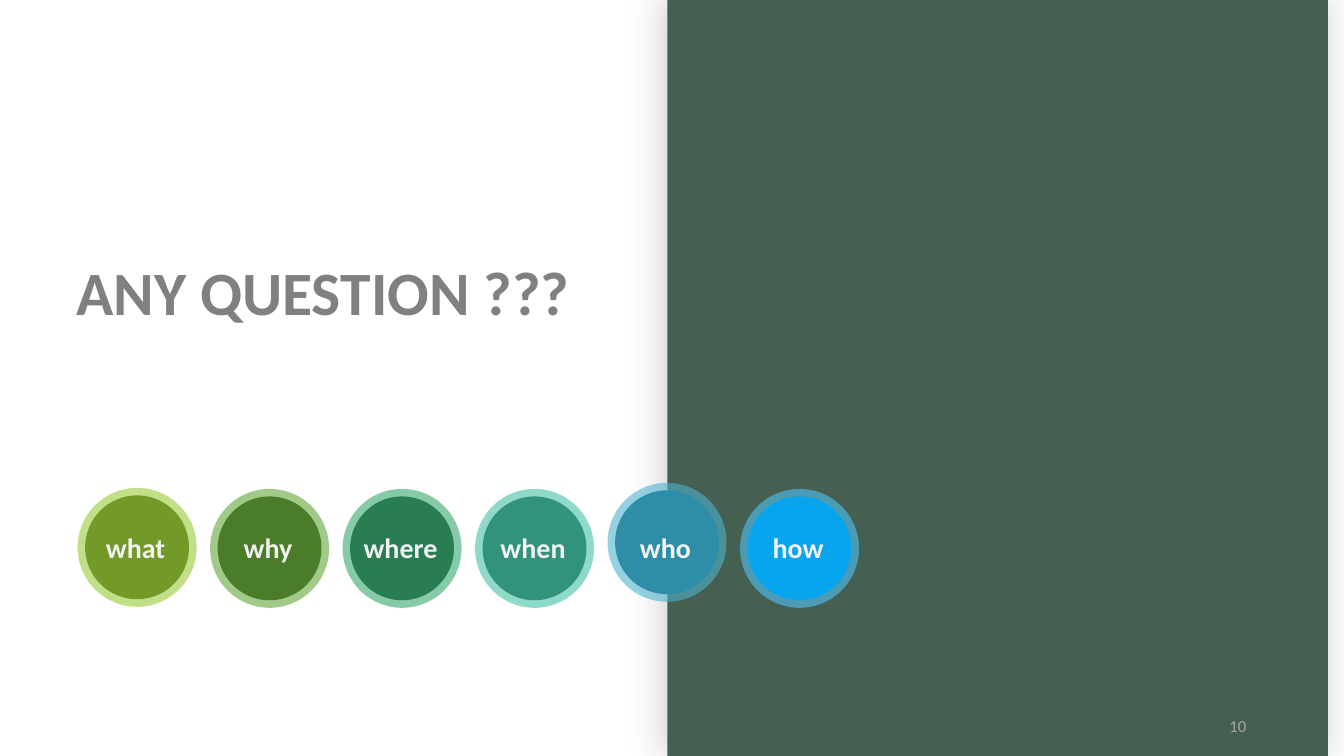
from pptx import Presentation
from pptx.dml.color import RGBColor
from pptx.enum.shapes import MSO_SHAPE as Shape
from pptx.enum.text import MSO_AUTO_SIZE as AutoSize, PP_ALIGN as Align
from pptx.oxml import parse_xml
from pptx.oxml.ns import nsdecls
from pptx.util import Inches, Pt
from lxml.etree import SubElement

PANEL_GREEN = RGBColor(0x45, 0x5F, 0x51)
TITLE_GRAY = RGBColor(0x80, 0x80, 0x80)
NUMBER_GRAY = RGBColor(0xA6, 0xA6, 0xA6)
LABEL_WHITE = RGBColor(0xF2, 0xF2, 0xF2)
LIME, LIME_DARK = RGBColor(0x99, 0xCB, 0x38), RGBColor(0x73, 0x9A, 0x28)
GREEN, GREEN_DARK = RGBColor(0x63, 0xA5, 0x37), RGBColor(0x4A, 0x7C, 0x29)
JADE, JADE_DARK = RGBColor(0x37, 0xA7, 0x6F), RGBColor(0x29, 0x7D, 0x53)
TEAL, TEAL_DARK = RGBColor(0x44, 0xC1, 0xA3), RGBColor(0x31, 0x93, 0x7B)
AQUA, AQUA_DARK = RGBColor(0x4E, 0xB3, 0xCF), RGBColor(0x2E, 0x8E, 0xA8)
SKY, SKY_DARK = RGBColor(0x51, 0xC3, 0xF9), RGBColor(0x08, 0xA5, 0xEF)

# Word, ring colour, disc colour, rows above the common line
QUESTIONS = [
    ("what", LIME, LIME_DARK, 0.1),
    ("why", GREEN, GREEN_DARK, 0),
    ("where", JADE, JADE_DARK, 0),
    ("when", TEAL, TEAL_DARK, 0),
    ("who", AQUA, AQUA_DARK, 0.6),
    ("how", SKY, SKY_DARK, 0),
]


class QuestionSlide:
    """Draws on a grid whose columns and rows are a tenth of an inch."""
    FONT = "Calibri"
    CELL = Inches(0.1)
    RING, DISC, PITCH = 11.8, 10.3, 13.14
    LABEL_WIDTH = 18.3

    def __init__(self, deck):
        self.slide = deck.slides.add_slide(deck.slide_layouts[6])

    def cells(self, *counts):
        return [round(count * self.CELL) for count in counts]

    def filled(self, parent, kind, box, color, alpha=None):
        shape = parent.shapes.add_shape(kind, *self.cells(*box))
        shape.shadow.inherit = False
        shape.fill.solid()
        shape.fill.fore_color.rgb = color
        shape.line.fill.background()
        if alpha is not None:
            tint = shape.fill._xPr.find(".//{*}srgbClr")
            SubElement(tint, tint.tag.replace("srgbClr", "alpha"), val=str(alpha * 1000))
        return shape

    def panel(self, box, color):
        panel = self.filled(self.slide, Shape.RECTANGLE, box, color)
        effects = panel._element.spPr.find("{*}effectLst")
        effects.append(parse_xml(
            f'<a:outerShdw {nsdecls("a")} blurRad="{Pt(27)}" dist="{Pt(3)}" '
            'dir="13500000" algn="br" rotWithShape="0"><a:srgbClr val="808080">'
            '<a:alpha val="40000"/></a:srgbClr></a:outerShdw>'))

    def text(self, parent, box, words, size, color, align=Align.LEFT, bold=False, wrap=True):
        frame = parent.shapes.add_textbox(*self.cells(*box)).text_frame
        frame.word_wrap = wrap
        frame.auto_size = AutoSize.SHAPE_TO_FIT_TEXT
        frame.text = words
        paragraph = frame.paragraphs[0]
        paragraph.alignment = align
        font = paragraph.runs[0].font
        font.name, font.size, font.bold = self.FONT, Pt(size), bold
        font.color.rgb = color
        return paragraph

    def badge(self, index, word, ring_color, disc_color, lift):
        left, top = 7.7 + index * self.PITCH, 48.5 - lift
        rim = (self.RING - self.DISC) / 2
        group = self.slide.shapes.add_group_shape()
        self.filled(group, Shape.OVAL, (left, top, self.RING, self.RING), ring_color, alpha=60)
        self.filled(group, Shape.OVAL, (left + rim, top + rim, self.DISC, self.DISC), disc_color)
        label = self.text(group, (left - 3.4, 50.5, self.LABEL_WIDTH, 5.5), word, 20,
                          LABEL_WHITE, Align.CENTER, bold=True)
        label.line_spacing = 1.5
        label.space_before = Pt(4)


def main():
    deck = Presentation()
    deck.slide_width, deck.slide_height = Inches(13.33), Inches(7.5)
    page = QuestionSlide(deck)

    # Green panel and page number
    page.panel((66.2, 0, 65.5, 75.3), PANEL_GREEN)
    page.text(page.slide, (110.2, 70.5, 14.4, 3), "10", 12, NUMBER_GRAY, Align.RIGHT)

    # Title
    page.text(page.slide, (6.6, 24.7, 51.4, 8.4), "ANY QUESTION ???", 44, TITLE_GRAY,
              bold=True, wrap=False)

    # Row of question words
    for index, question in enumerate(QUESTIONS):
        page.badge(index, *question)

    deck.save("out.pptx")


if __name__ == "__main__":
    main()
